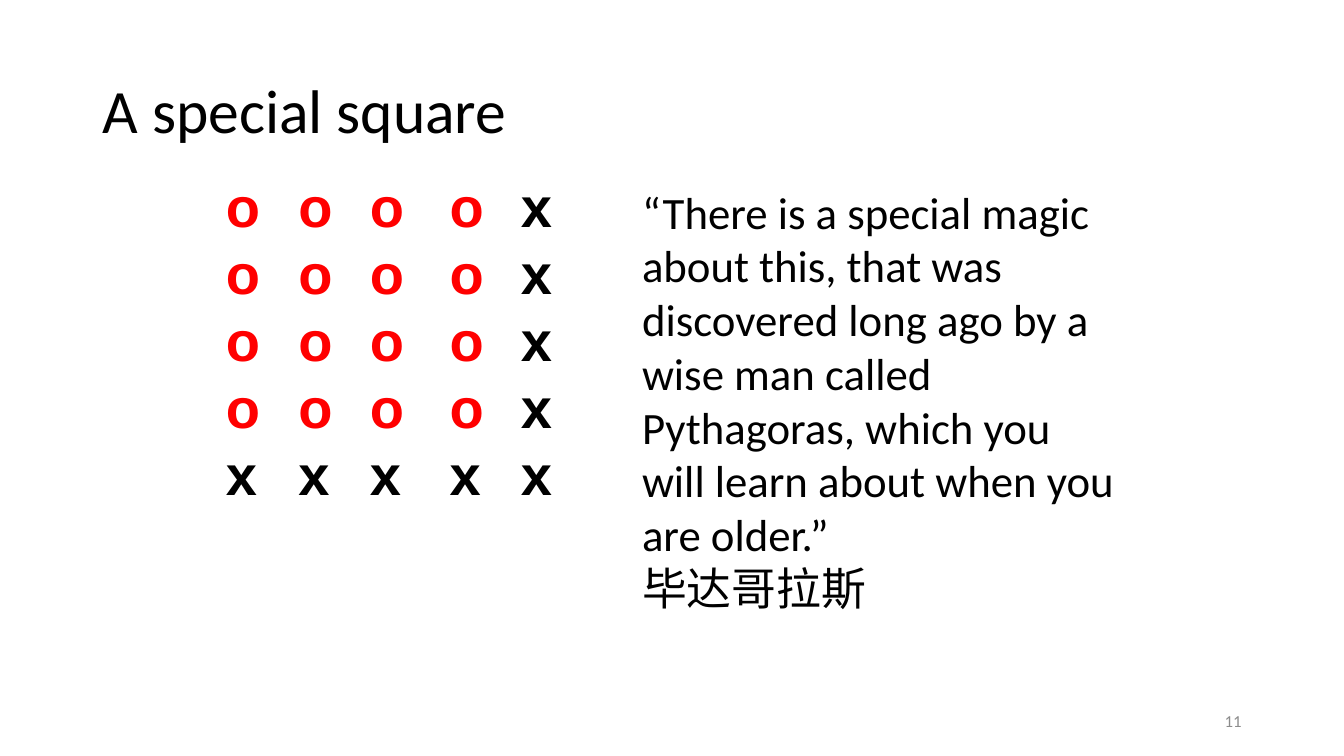
from dataclasses import dataclass

from lxml import etree
from pptx import Presentation
from pptx.dml.color import RGBColor
from pptx.enum.text import MSO_ANCHOR, MSO_AUTO_SIZE, PP_ALIGN
from pptx.oxml.ns import qn
from pptx.util import Cm, Pt

LEFT, RIGHT = PP_ALIGN.LEFT, PP_ALIGN.RIGHT
TOP, MIDDLE = MSO_ANCHOR.TOP, MSO_ANCHOR.MIDDLE
NO_FIT, GROW = MSO_AUTO_SIZE.NONE, MSO_AUTO_SIZE.SHAPE_TO_FIT_TEXT

COLORS = {"black": "000000", "red": "FF0000", "grey": "8C8C8C", "white": "FFFFFF"}
SIZE = 5
COLUMN_WIDTHS = (1.83, 1.8, 2.01, 1.8, 1.4)
ROW_HEIGHT = 1.69


@dataclass(frozen=True)
class TextPart:
    box: tuple[float, float, float, float]
    lines: tuple[str, ...]
    size: int
    color: str = "black"
    align: PP_ALIGN = LEFT
    anchor: MSO_ANCHOR = TOP
    fit: MSO_AUTO_SIZE = NO_FIT


HEADING = TextPart((2.33, 1.01, 29.21, 3.68), ("A special square",), 44, anchor=MIDDLE)
PAGE_NUMBER = TextPart((22.43, 17.66, 9.11, 1.01), ("11",), 12, "grey", RIGHT, MIDDLE)
QUOTE = TextPart(
    (15.93, 4.52, 12.6, 11.07),
    ("“There is a special magic about this, that was discovered long ago by a "
     "wise man called Pythagoras, which you will learn about when you are older.”",
     "毕达哥拉斯"),
    32, fit=GROW)


def set_all(target, values: dict) -> None:
    for attribute, value in values.items():
        setattr(target, attribute, value)


def style_font(font, name: str, size: int, color: str, bold: bool = False) -> None:
    set_all(font, {"name": name, "size": Pt(size), "bold": bold})
    font.color.rgb = RGBColor.from_string(COLORS[color])


def write_part(shape, part: TextPart) -> None:
    left, top, width, height = map(Cm, part.box)
    set_all(shape, {"left": left, "top": top, "width": width, "height": height})
    frame = shape.text_frame
    frame.text = "\n".join(part.lines)
    set_all(frame, {"word_wrap": True, "auto_size": part.fit,
                    "vertical_anchor": part.anchor})
    for paragraph in frame.paragraphs:
        paragraph.alignment = part.align
        style_font(paragraph.font, "Calibri", part.size, part.color)


def add_border(cell, side: str, points: int) -> None:
    line = etree.SubElement(cell._tc.get_or_add_tcPr(), qn(f"a:ln{side}"),
                            w=str(Pt(points)))
    fill = etree.SubElement(line, qn("a:solidFill"))
    etree.SubElement(fill, qn("a:srgbClr"), val=COLORS["white"])


def fill_cell(cell, row: int, column: int) -> None:
    # The last row and column hold the x that extend the square of o
    is_edge = SIZE - 1 in (row, column)
    cell.text = "x" if is_edge else "o"
    set_all(cell, {"margin_left": Cm(0.18), "margin_right": Cm(0.18),
                   "margin_top": 0, "margin_bottom": 0})
    paragraph = cell.text_frame.paragraphs[0]
    paragraph.space_after = Pt(4.5)
    style_font(paragraph.font, "Arial", 40, "black" if is_edge else "red", bold=True)
    # The rule under the first row is thicker
    widths = {"L": 1, "R": 1, "T": 3 if row == 1 else 1, "B": 3 if row == 0 else 1}
    for side, points in widths.items():
        add_border(cell, side, points)
    cell.fill.background()


def add_square(slide) -> None:
    square = slide.shapes.add_table(SIZE, SIZE, Cm(5.51), Cm(4.45),
                                    Cm(sum(COLUMN_WIDTHS)), Cm(SIZE * ROW_HEIGHT)).table
    set_all(square, {"first_row": False, "horz_banding": False})
    for column, width in zip(square.columns, COLUMN_WIDTHS):
        column.width = Cm(width)
    for row in range(SIZE):
        square.rows[row].height = Cm(ROW_HEIGHT)
        for column in range(SIZE):
            fill_cell(square.cell(row, column), row, column)


def main() -> None:
    deck = Presentation()
    set_all(deck, {"slide_width": Cm(33.87), "slide_height": Cm(19.05)})
    slide = deck.slides.add_slide(deck.slide_layouts.get_by_name("Title Only"))

    # Title
    write_part(slide.shapes.title, HEADING)
    slide.shapes.title.text_frame.paragraphs[0].line_spacing = 0.9

    # Square of o and x
    add_square(slide)

    # Page number and quotation
    for part in (PAGE_NUMBER, QUOTE):
        write_part(slide.shapes.add_textbox(*map(Cm, part.box)), part)

    deck.save("out.pptx")


if __name__ == "__main__":
    main()
